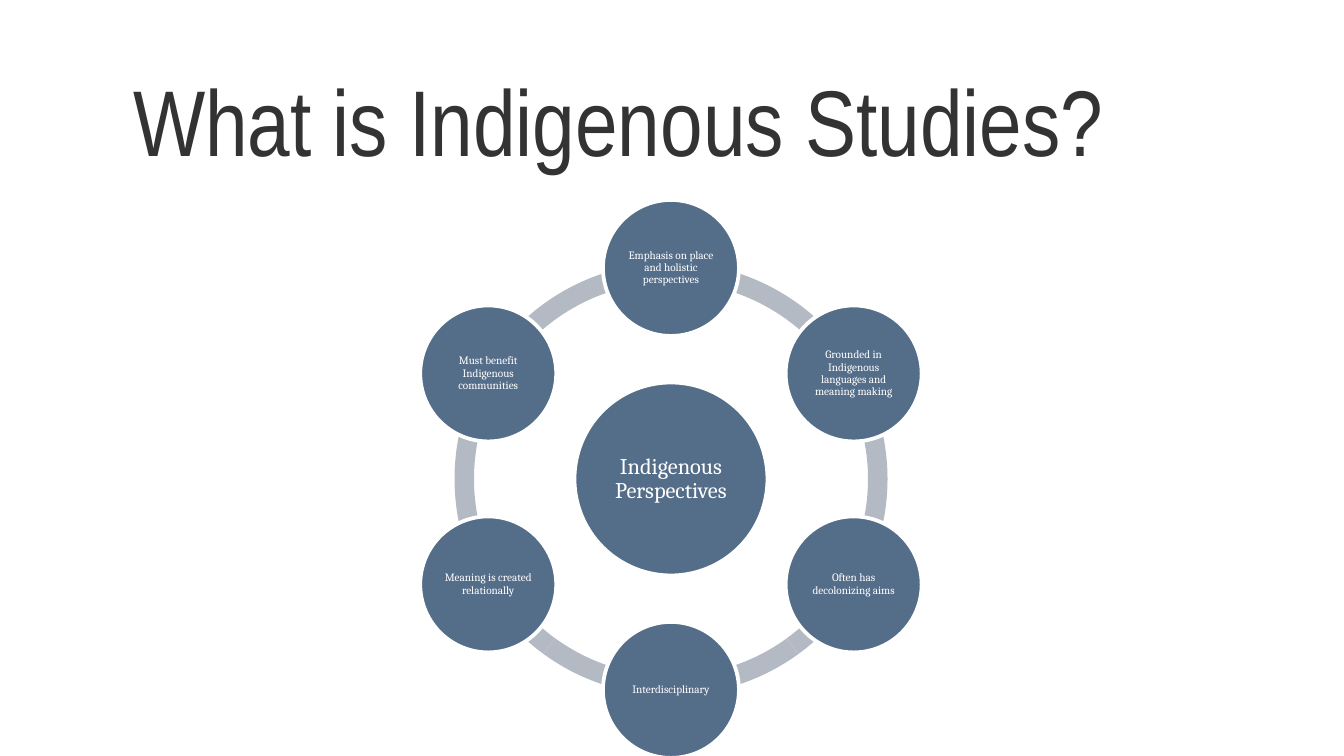
import math
import pptx
import pptx.util
import pptx.dml.color
import pptx.enum.shapes
import pptx.enum.text

TITLE = "What is Indigenous Studies?"
HUB = "Indigenous Perspectives"
NODES = [
    "Emphasis on place and holistic perspectives",
    "Grounded in Indigenous languages and meaning making",
    "Often has decolonizing aims",
    "Interdisciplinary",
    "Meaning is created relationally",
    "Must benefit Indigenous communities",
]
ARCS = [18, 54, 90, 126, 162, 198]

MID_X, MID_Y = 671, 479
ORBIT = 211
RING, HUB_SIZE, NODE_SIZE = 433, 193, 136
SCALE = 914400 / 134.4
KIND = pptx.enum.shapes.MSO_SHAPE
ANCHOR = pptx.enum.text.MSO_ANCHOR
ALIGN = pptx.enum.text.PP_ALIGN


def px(n):
    return pptx.util.Emu(round(n * SCALE))


def color(code):
    return pptx.dml.color.RGBColor.from_string(code)


def write(shape, text, size, font, code, align, anchor, space, inset):
    frame = shape.text_frame
    frame.text = text
    frame.word_wrap = True
    frame.auto_size = pptx.enum.text.MSO_AUTO_SIZE.NONE
    frame.vertical_anchor = anchor
    frame.margin_left = frame.margin_right = px(inset)
    frame.margin_top = frame.margin_bottom = px(inset)
    line = frame.paragraphs[0]
    line.alignment = align
    line.line_spacing = space
    style = line.runs[0].font
    style.size = pptx.util.Pt(size)
    style.name = font
    style.color.rgb = color(code)


def round_shape(slide, kind, x, y, size, fill):
    shape = slide.shapes.add_shape(
        kind, px(x - size / 2), px(y - size / 2), px(size), px(size))
    shape.shadow.inherit = False
    shape.fill.solid()
    shape.fill.fore_color.rgb = color(fill)
    return shape


def arc(slide, start, end):
    shape = round_shape(slide, KIND.BLOCK_ARC, MID_X, MID_Y, RING, "B4BAC4")
    shape.line.fill.background()
    shape.adjustments[0] = start * 0.6
    shape.adjustments[1] = end * 0.6
    shape.adjustments[2] = 0.045


def circle(slide, text, x, y, size, points, inset):
    shape = round_shape(slide, KIND.OVAL, x, y, size, "546D89")
    shape.line.color.rgb = color("FFFFFF")
    shape.line.width = pptx.util.Pt(2)
    write(shape, text, points, "Cambria", "FFFFFF",
          ALIGN.CENTER, ANCHOR.MIDDLE, 0.9, inset)


def main():
    deck = pptx.Presentation()
    deck.slide_width, deck.slide_height = px(1344), px(756)
    slide = deck.slides.add_slide(deck.slide_layouts[5])

    title = slide.shapes.title
    title.left, title.top = px(133), px(85)
    title.width, title.height = px(1077), px(73)
    write(title, TITLE, 50, "Arial Narrow", "333333",
          ALIGN.LEFT, ANCHOR.TOP, 0.8, 0)

    for start, end in zip(ARCS, ARCS[1:] + ARCS[:1]):
        arc(slide, start, end)

    circle(slide, HUB, MID_X, MID_Y, HUB_SIZE, 12, 2)
    for i, text in enumerate(NODES):
        turn = math.tau * i / len(NODES)
        x = MID_X + ORBIT * math.sin(turn)
        y = MID_Y - ORBIT * math.cos(turn)
        circle(slide, text, x, y, NODE_SIZE, 6, 1)

    deck.save("out.pptx")


if __name__ == "__main__":
    main()
